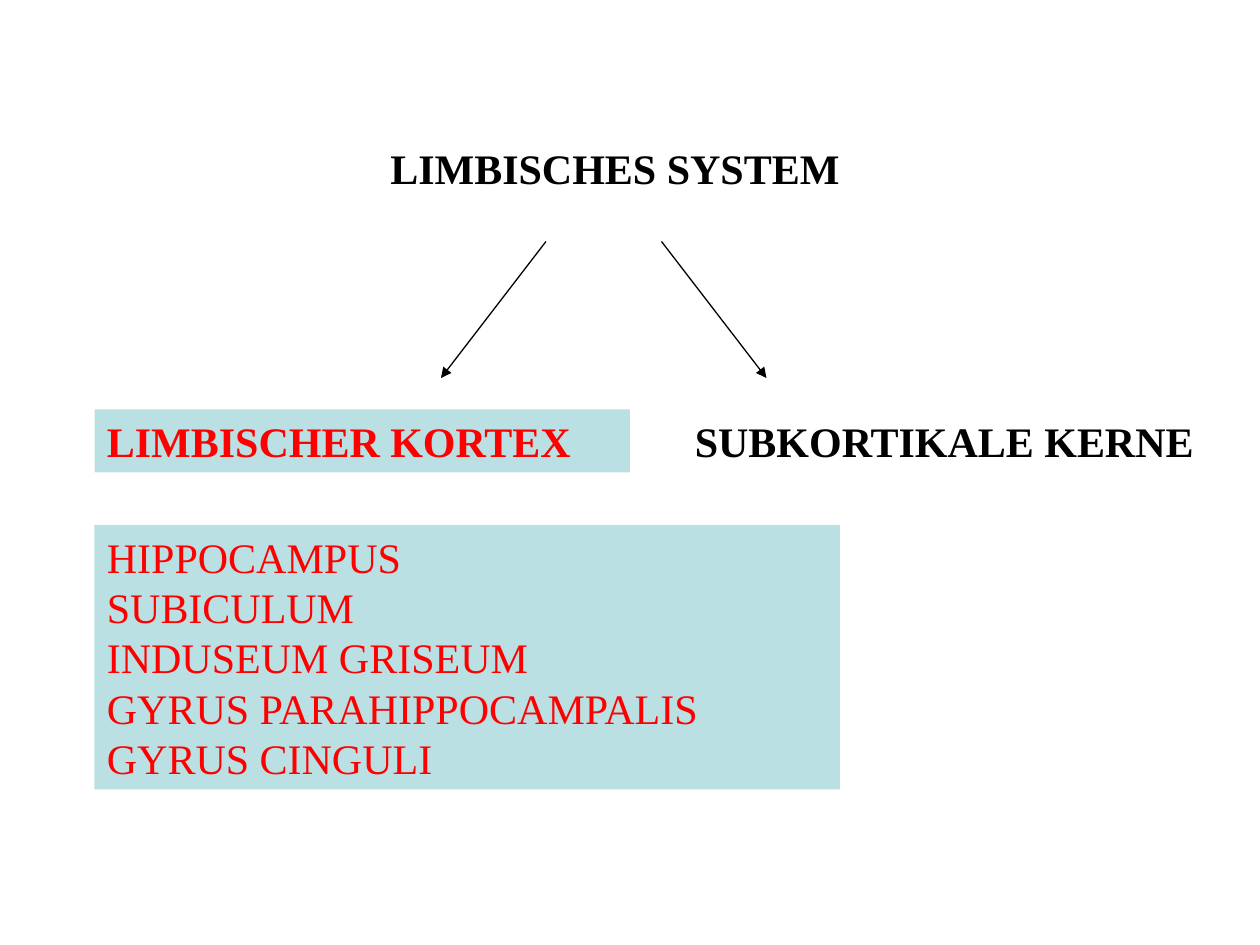
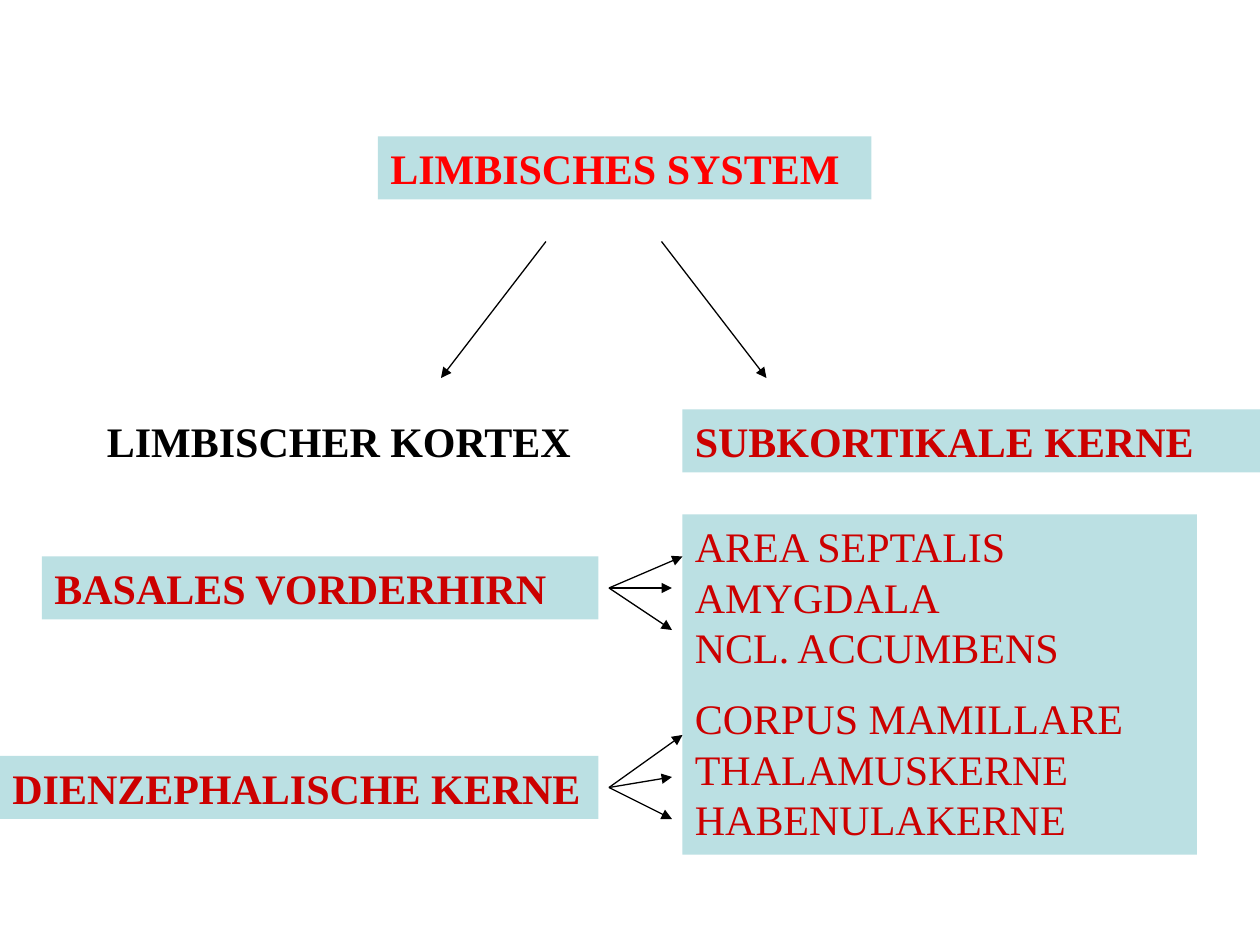
import collections
import dataclasses

import pptx
import pptx.dml.color
import pptx.enum.shapes
import pptx.enum.text
import pptx.oxml.ns
import pptx.util
from lxml import etree

Box = collections.namedtuple("Box", "left top width height")
CELL = pptx.util.Inches(1) / 12  # the slide is 120 columns by 90 rows
COLS, ROWS = 120, 90


@dataclasses.dataclass(frozen=True)
class Theme:
    font: str = "Times New Roman"
    size: int = 24
    gap: int = 12
    line: float = 0.75
    ink: str = "000000"
    band: str = "BBE0E3"
    red: str = "FF0000"
    dark: str = "CC0000"


THEME = Theme()


def rgb(code):
    return pptx.dml.color.RGBColor.from_string(code)


def grid(*cells):
    return [round(cell * CELL) for cell in cells]


def label(slide, box, groups, tint=None, bold=True):
    """Write one paragraph per group of lines; a tint also adds the band."""
    if tint:
        shape = slide.shapes.add_shape(
            pptx.enum.shapes.MSO_SHAPE.RECTANGLE, *grid(*box))
        shape.shadow.inherit = False
        shape.fill.solid()
        shape.fill.fore_color.rgb = rgb(THEME.band)
        shape.line.fill.background()
    else:
        shape = slide.shapes.add_textbox(*grid(*box))
    frame = shape.text_frame
    form = {"word_wrap": True,
            "vertical_anchor": pptx.enum.text.MSO_ANCHOR.TOP,
            "auto_size": pptx.enum.text.MSO_AUTO_SIZE.SHAPE_TO_FIT_TEXT}
    for name, value in form.items():
        setattr(frame, name, value)
    type_form = {"name": THEME.font, "size": pptx.util.Pt(THEME.size),
                 "bold": bold}
    for index, lines in enumerate(groups):
        para = frame.paragraphs[0] if index == 0 else frame.add_paragraph()
        para.text = "\v".join(lines)
        para.alignment = pptx.enum.text.PP_ALIGN.LEFT
        para.space_before = pptx.util.Pt(THEME.gap if index else 0)
        for run in para.runs:
            for name, value in type_form.items():
                setattr(run.font, name, value)
            run.font.color.rgb = rgb(tint or THEME.ink)


def arrow(slide, start, end):
    link = slide.shapes.add_connector(
        pptx.enum.shapes.MSO_CONNECTOR.STRAIGHT, *grid(*start, *end))
    link.line.width = pptx.util.Pt(THEME.line)
    link.line.color.rgb = rgb(THEME.ink)
    tag = pptx.oxml.ns.qn
    etree.SubElement(link.line._get_or_add_ln(), tag("a:tailEnd"),
                     type="triangle")
    etree.SubElement(link._element.spPr, tag("a:effectLst"))


def tree(slide, box, root=None, left=None, right=None):
    """Draw the root and its two branches; a tint marks a label."""
    x, y = box.left, box.top
    low = y + box.height - 6
    label(slide, Box(x + 27, y, 47, 6), [["LIMBISCHES SYSTEM"]], root)
    label(slide, Box(x, low, 51, 6), [["LIMBISCHER KORTEX"]], left)
    label(slide, Box(x + 56, low, box.width - 56, 6),
          [["SUBKORTIKALE KERNE"]], right)
    for start, end in ((43, 33), (54, 64)):
        arrow(slide, (x + start, y + 10), (x + end, low - 3))


def source(slide, box, text, rises):
    """Draw a marked label with arrows fanning out from its right side."""
    label(slide, box, [[text]], THEME.dark)
    x, y = box.left + box.width + 1, box.top + box.height / 2
    for reach, rise in zip((7, 6, 6), rises):
        arrow(slide, (x, y), (x + reach, y + rise))


def cortex(slide, box):
    tree(slide, box, left=THEME.red)
    label(slide, Box(box.left, box.top + 37, 71, 25.2),
          [["HIPPOCAMPUS", "SUBICULUM", "INDUSEUM GRISEUM",
            "GYRUS PARAHIPPOCAMPALIS", "GYRUS CINGULI"]],
          THEME.red, bold=False)


def nuclei(slide, box):
    tree(slide, box, root=THEME.red, right=THEME.dark)
    x, y = box.left, box.top
    label(slide, Box(x + 56, y + 36, 49, 32.4),
          [["AREA SEPTALIS", "AMYGDALA", "NCL. ACCUMBENS"],
           ["CORPUS MAMILLARE", "THALAMUSKERNE", "HABENULAKERNE"]],
          THEME.dark, bold=False)
    source(slide, Box(x - 5, y + 40, 53, 6), "BASALES VORDERHIRN", (-3, 0, 4))
    source(slide, Box(x - 9, y + 59, 57, 6), "DIENZEPHALISCHE KERNE",
           (-5, -1, 3))


def main():
    deck = pptx.Presentation()
    deck.slide_width, deck.slide_height = grid(COLS, ROWS)
    box = Box(9, 13, COLS - 9, 32)
    for draw in (cortex, nuclei):
        draw(deck.slides.add_slide(deck.slide_layouts[6]), box)
    deck.save("out.pptx")


if __name__ == "__main__":
    main()
